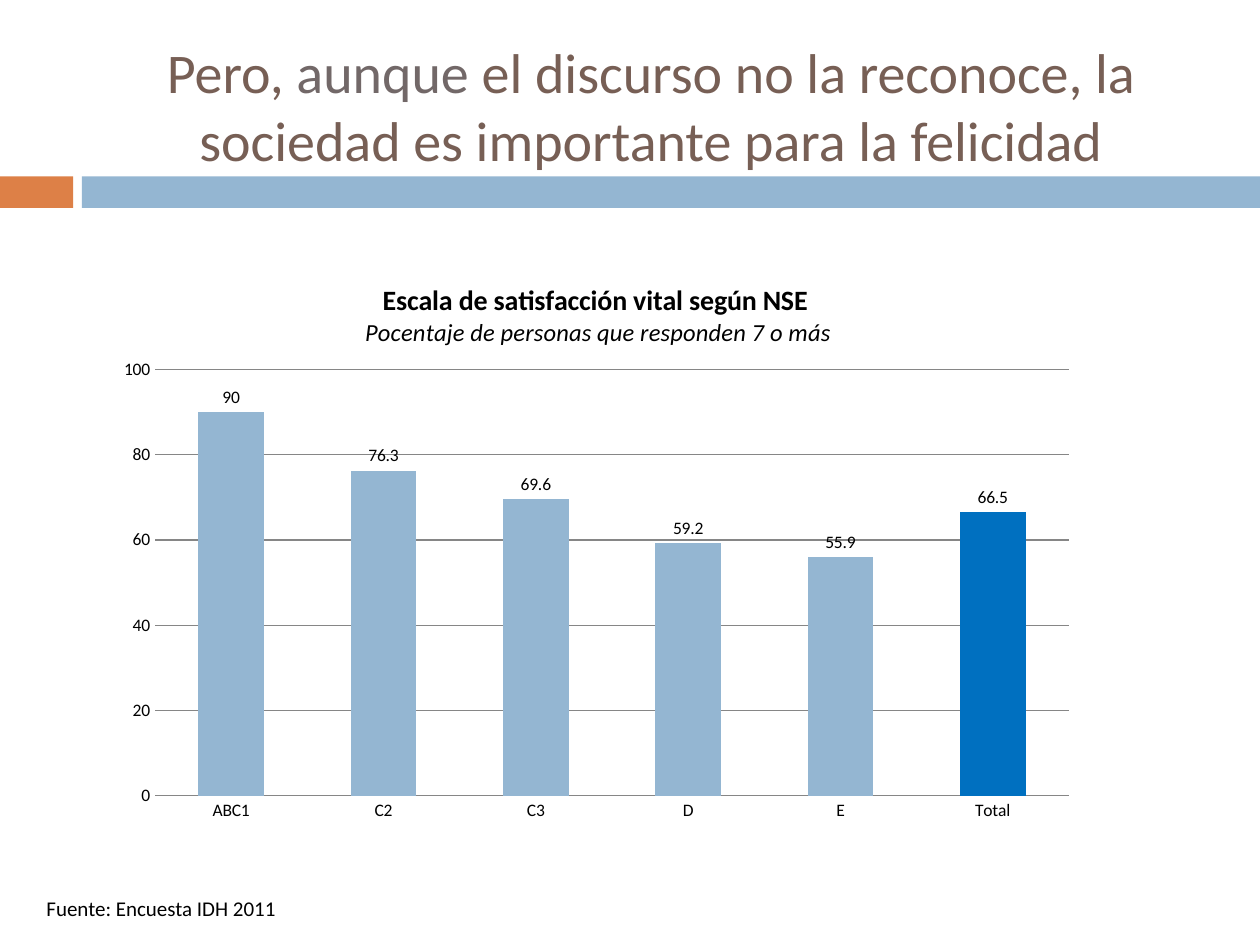
from dataclasses import dataclass

from pptx import Presentation
from pptx import util as u
from pptx.chart.data import CategoryChartData
from pptx.dml.color import RGBColor
from pptx.enum import chart as ch, shapes, text
from pptx.oxml import parse_xml
from pptx.oxml.ns import nsdecls


@dataclass(frozen=True)
class Theme:
    font: str = "Calibri"
    brown: str = "775F55"
    gray: str = "726868"
    orange: str = "DD8047"
    blue: str = "94B6D2"
    strong_blue: str = "0070C0"
    line: str = "868686"
    black: str = "000000"
    title: int = 32
    heading: int = 16
    subheading: int = 14
    source: int = 12
    chart: int = 10


class Deck:
    COLS, ROWS = 100, 75

    def __init__(self, theme):
        self.theme = theme
        self.prs = Presentation()
        self.prs.slide_width, self.prs.slide_height = u.Inches(10), u.Inches(7.5)
        self.s = self.prs.slides.add_slide(self.prs.slide_layouts[5])

    def box(self, col, row, cols, rows):
        """Turn grid columns and rows into slide lengths."""
        dx = self.prs.slide_width / self.COLS
        dy = self.prs.slide_height / self.ROWS
        return [u.Emu(round(v)) for v in (col * dx, row * dy, cols * dx, rows * dy)]

    def style(self, font, size, color=None, bold=None, italic=None):
        font.name, font.size = self.theme.font, u.Pt(size)
        font.bold, font.italic = bold, italic
        font.color.rgb = RGBColor.from_string(color or self.theme.black)

    def title(self, grid, runs):
        sp = self.s.shapes.title
        sp.left, sp.top, sp.width, sp.height = self.box(*grid)
        tf = sp.text_frame
        tf.auto_size = text.MSO_AUTO_SIZE.NONE
        tf.vertical_anchor = text.MSO_ANCHOR.MIDDLE
        p = tf.paragraphs[0]
        p.alignment = text.PP_ALIGN.CENTER
        for words, color in runs:
            r = p.add_run()
            r.text = words
            self.style(r.font, self.theme.title, color)

    def band(self, grid, color):
        sp = self.s.shapes.add_shape(shapes.MSO_SHAPE.RECTANGLE, *self.box(*grid))
        sp.shadow.inherit = False
        sp.fill.solid()
        sp.fill.fore_color.rgb = RGBColor.from_string(color)
        sp.line.fill.background()

    def note(self, grid, words):
        tf = self.s.shapes.add_textbox(*self.box(*grid)).text_frame
        tf.word_wrap = False
        tf.auto_size = text.MSO_AUTO_SIZE.SHAPE_TO_FIT_TEXT
        p = tf.paragraphs[0]
        p.text = words
        self.style(p.font, self.theme.source)

    def columns(self, grid, heading, subheading, values, accent):
        data = CategoryChartData()
        data.categories = list(values)
        data.add_series("Series 1", list(values.values()))
        chart = self.s.shapes.add_chart(
            ch.XL_CHART_TYPE.COLUMN_CLUSTERED, *self.box(*grid), data).chart
        chart.has_legend = False
        self.style(chart.font, self.theme.chart)
        self.chart_title(chart, heading, subheading)
        self.axes(chart)

        # Columns, with one accented
        plot = chart.plots[0]
        plot.vary_by_categories = False
        plot.gap_width, plot.overlap = 132, -31
        series = plot.series[0]
        accent_point = series.points[list(values).index(accent)]
        for item, color in ((series, self.theme.blue),
                            (accent_point, self.theme.strong_blue)):
            item.format.fill.solid()
            item.format.fill.fore_color.rgb = RGBColor.from_string(color)

        # Value labels
        plot.has_data_labels = True
        labels = plot.data_labels
        labels.show_value = True
        labels.position = ch.XL_LABEL_POSITION.OUTSIDE_END
        self.style(labels.font, self.theme.chart)

    def chart_title(self, chart, heading, subheading):
        tf = chart.chart_title.text_frame
        lines = ((tf.paragraphs[0], heading, self.theme.heading, True, False),
                 (tf.add_paragraph(), subheading, self.theme.subheading, False, True))
        for p, words, size, bold, italic in lines:
            r = p.add_run()
            r.text = words
            self.style(r.font, size, bold=bold, italic=italic)

        # Fixed places for the title and the plot
        title, area = chart._chartSpace.xpath("c:chart/c:title | c:chart/c:plotArea")
        for part in (title, area):
            for old in part.xpath("c:layout"):
                part.remove(old)
        title.xpath("c:tx")[0].addnext(self.layout(x=0.26, y=0.04))
        area.insert(0, self.layout("inner", x=0.05, y=0.2, w=0.93, h=0.74))

    @staticmethod
    def layout(target=None, **shares):
        parts = f'<c:layoutTarget val="{target}"/>' if target else ""
        parts += "".join(f'<c:{k}Mode val="edge"/>' for k in shares if k in "xy")
        parts += "".join(f'<c:{k} val="{v}"/>' for k, v in shares.items())
        return parse_xml(f'<c:layout {nsdecls("c")}><c:manualLayout>{parts}'
                         "</c:manualLayout></c:layout>")

    def axes(self, chart):
        value, category = chart.value_axis, chart.category_axis
        value.minimum_scale, value.maximum_scale, value.major_unit = 0, 100, 20
        value.has_major_gridlines = True
        value.tick_labels.number_format = "0"
        value.tick_labels.number_format_is_linked = False
        value.format.line.fill.background()
        for axis in (value, category):
            axis.major_tick_mark = axis.minor_tick_mark = ch.XL_TICK_MARK.NONE
            self.style(axis.tick_labels.font, self.theme.chart)
        for line in (value.major_gridlines.format.line, category.format.line):
            line.width = u.Pt(0.75)
            line.color.rgb = RGBColor.from_string(self.theme.line)


def main():
    theme = Theme()
    deck = Deck(theme)

    # Title and two-colour band
    deck.band((0, 14, 5.8, 2.5), theme.orange)
    deck.band((6.5, 14, 93.5, 2.5), theme.blue)
    deck.title((6.7, 2.1, 90, 12.5), [
        ("Pero, ", theme.brown),
        ("aunque", theme.gray),
        (" el discurso no la reconoce, la sociedad es importante para la felicidad",
         theme.brown)])

    # Source and chart
    deck.note((2.7, 70.6, 20.9, 3), "Fuente: Encuesta IDH 2011")
    deck.columns(
        (8.4, 20.2, 78, 45.7),
        "Escala de satisfacción vital según NSE ",
        "Pocentaje de personas que responden 7 o más",
        {"ABC1": 90, "C2": 76.3, "C3": 69.6, "D": 59.2, "E": 55.9, "Total": 66.5},
        accent="Total")

    deck.prs.save("out.pptx")


if __name__ == "__main__":
    main()
